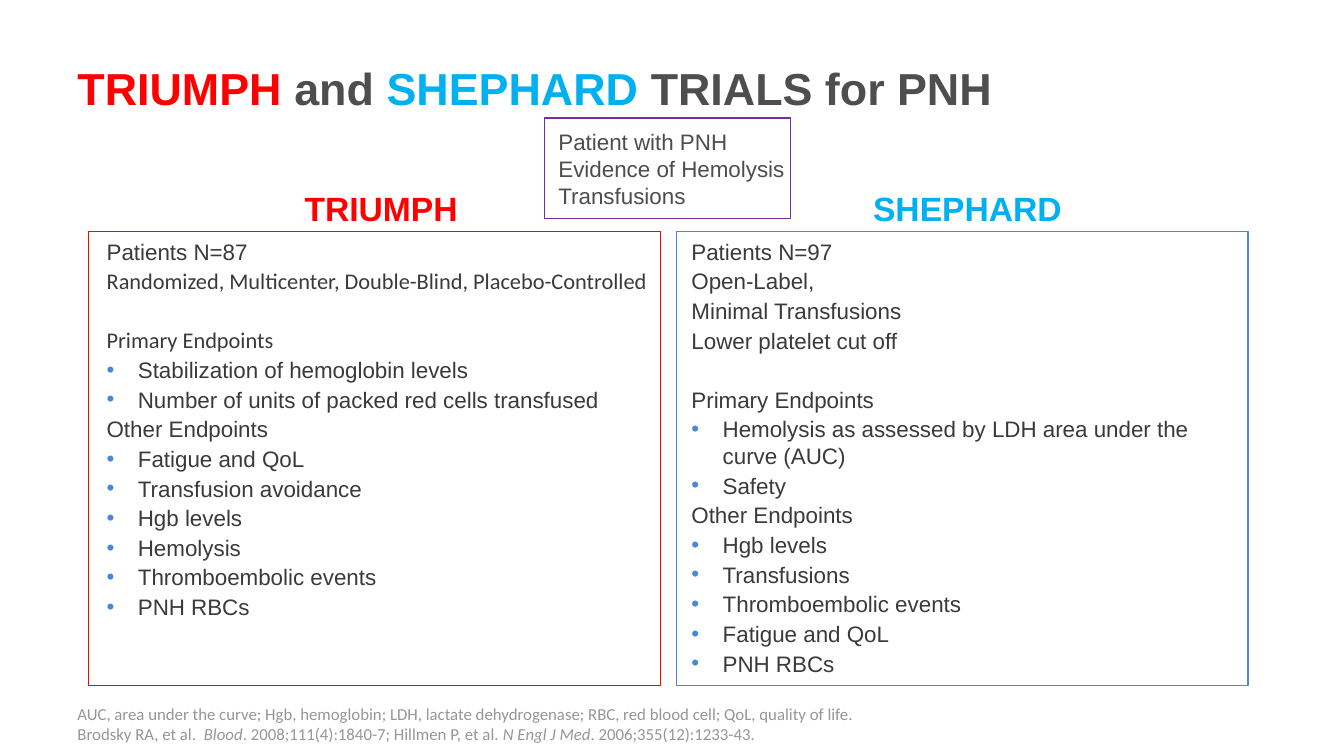
"""Build a slide comparing the TRIUMPH and SHEPHARD trials for PNH."""
from lxml import etree
from pptx import Presentation
from pptx.dml.color import RGBColor
from pptx.enum.shapes import MSO_SHAPE
from pptx.enum.text import MSO_ANCHOR, PP_ALIGN
from pptx.oxml.ns import qn
from pptx.util import Inches, Pt

RECTANGLE = MSO_SHAPE.RECTANGLE
TOP, MIDDLE, BOTTOM = MSO_ANCHOR.TOP, MSO_ANCHOR.MIDDLE, MSO_ANCHOR.BOTTOM
LEFT, CENTER = PP_ALIGN.LEFT, PP_ALIGN.CENTER

RED = RGBColor(0xFF, 0x00, 0x00)
SKY = RGBColor(0x00, 0xB0, 0xF0)
BLUE = RGBColor(0x4A, 0x86, 0xD9)
PURPLE = RGBColor(0x70, 0x30, 0xA0)
TITLE_GRAY = RGBColor(0x4D, 0x4E, 0x4D)
BOX_GRAY = RGBColor(0x4D, 0x4D, 0x4D)
BODY_GRAY = RGBColor(0x3A, 0x3A, 0x3A)
NOTE_GRAY = RGBColor(0x96, 0x96, 0x96)

ARIAL, CALIBRI = {"font": "Arial"}, {"font": "Calibri"}
BULLET = {"bullet": True}
SECTION_GAP = {"before": 22}
ITALIC = {"italic": True}

TITLE = [([("TRIUMPH", {"color": RED}), (" and ", {}),
           ("SHEPHARD", {"color": SKY}), (" TRIALS for PNH", {})], {})]
POPULATION = [("Patient with PNH", {}), ("Evidence of Hemolysis", {}), ("Transfusions", {})]
FOOTNOTE = [
    ("AUC, area under the curve; Hgb, hemoglobin; LDH, lactate dehydrogenase; "
     "RBC, red blood cell; QoL, quality of life.", {}),
    ([("Brodsky RA, et al.  ", {}), ("Blood", ITALIC),
      (". 2008;111(4):1840-7; Hillmen P, et al. ", {}), ("N Engl J Med", ITALIC),
      (". 2006;355(12):1233-43.", {})], {}),
]
TRIUMPH = [
    ("Patients N=87", {}),
    ("Randomized, Multicenter, Double-Blind, Placebo-Controlled", CALIBRI),
    ("Primary Endpoints", {**CALIBRI, **SECTION_GAP}),
    ("Stabilization of hemoglobin levels", BULLET),
    ("Number of units of packed red cells transfused", BULLET),
    ("Other Endpoints", {}),
    ("Fatigue and QoL", BULLET),
    ("Transfusion avoidance", BULLET),
    ("Hgb levels", BULLET),
    ("Hemolysis", BULLET),
    ("Thromboembolic events", BULLET),
    ("PNH RBCs", BULLET),
]
SHEPHARD = [
    ("Patients N=97", {}),
    ("Open-Label,", {}),
    ("Minimal Transfusions", {}),
    ("Lower platelet cut off", {}),
    ("Primary Endpoints", SECTION_GAP),
    ("Hemolysis as assessed by LDH area under the curve (AUC)", BULLET),
    ("Safety", BULLET),
    ("Other Endpoints", {}),
    ("Hgb levels", BULLET),
    ("Transfusions", BULLET),
    ("Thromboembolic events", BULLET),
    ("Fatigue and QoL", BULLET),
    ("PNH RBCs", BULLET),
]
TRIALS = [
    {"name": "TRIUMPH", "color": RED, "line": RED, "frame_left": 0.88,
     "text_left": 0.96, "width": 5.64, "lines": TRIUMPH},
    {"name": "SHEPHARD", "color": SKY, "line": BLUE, "frame_left": 6.71,
     "text_left": 6.76, "width": 5.67, "lines": SHEPHARD},
]


def add_bullet(paragraph):
    """Give a paragraph a hanging blue bullet."""
    properties = paragraph._p.get_or_add_pPr()
    properties.set("marL", str(Inches(0.31)))
    properties.set("indent", str(-Inches(0.31)))
    color = etree.SubElement(properties, qn("a:buClr"))
    etree.SubElement(color, qn("a:srgbClr"), val=str(BLUE))
    etree.SubElement(properties, qn("a:buFont"), typeface="Arial")
    etree.SubElement(properties, qn("a:buChar"), char="•")


def add_text(slide, lines, box, *, size, color, font="Arial", bold=False,
             align=LEFT, anchor=TOP, spacing=0):
    """Add a text box of (text or runs, format) lines."""
    frame = slide.shapes.add_textbox(*map(Inches, box)).text_frame
    frame.word_wrap = True
    frame.vertical_anchor = anchor
    for index, (content, style) in enumerate(lines):
        paragraph = frame.paragraphs[0] if index == 0 else frame.add_paragraph()
        paragraph.alignment = align
        if index:
            paragraph.space_before = Pt(style.get("before", spacing))
        paragraph.space_after = Pt(spacing)
        if style.get("bullet"):
            add_bullet(paragraph)
        runs = [(content, {})] if isinstance(content, str) else content
        for text, run_style in runs:
            run = paragraph.add_run()
            run.text = text
            run.font.name = style.get("font", font)
            run.font.size = Pt(size)
            run.font.bold = bold
            run.font.italic = run_style.get("italic", False)
            run.font.color.rgb = run_style.get("color", color)


def add_frame(slide, box, color):
    """Add an unfilled rectangle with a thin outline."""
    shape = slide.shapes.add_shape(RECTANGLE, *map(Inches, box))
    shape.shadow.inherit = False
    shape.fill.background()
    shape.line.color.rgb = color
    shape.line.width = Pt(1)


def main():
    """Lay out the slide and save it."""
    presentation = Presentation()
    presentation.slide_width = Inches(13.33)
    presentation.slide_height = Inches(7.5)
    slide = presentation.slides.add_slide(presentation.slide_layouts[6])

    add_text(slide, TITLE, (0.67, 0.22, 11.75, 1.3), size=32, color=TITLE_GRAY,
             bold=True, anchor=MIDDLE)
    for trial in TRIALS:
        left, width = trial["text_left"], trial["width"]
        add_text(slide, [(trial["name"], {})], (left, 1.6, width, 0.71), size=24,
                 color=trial["color"], bold=True, align=CENTER, anchor=BOTTOM)
        add_text(slide, trial["lines"], (left, 2.31, width, 4.33), size=16,
                 color=BODY_GRAY, spacing=1)
        add_frame(slide, (trial["frame_left"], 2.3, 5.67, 4.5), trial["line"])
    add_text(slide, FOOTNOTE, (0.67, 6.95, 11.5, 0.48), size=12, color=NOTE_GRAY,
             anchor=BOTTOM, **CALIBRI)
    add_text(slide, POPULATION, (5.44, 1.22, 2.49, 0.91), size=16, color=BOX_GRAY)
    add_frame(slide, (5.4, 1.17, 2.44, 1), PURPLE)

    presentation.save("out.pptx")


if __name__ == "__main__":
    main()
